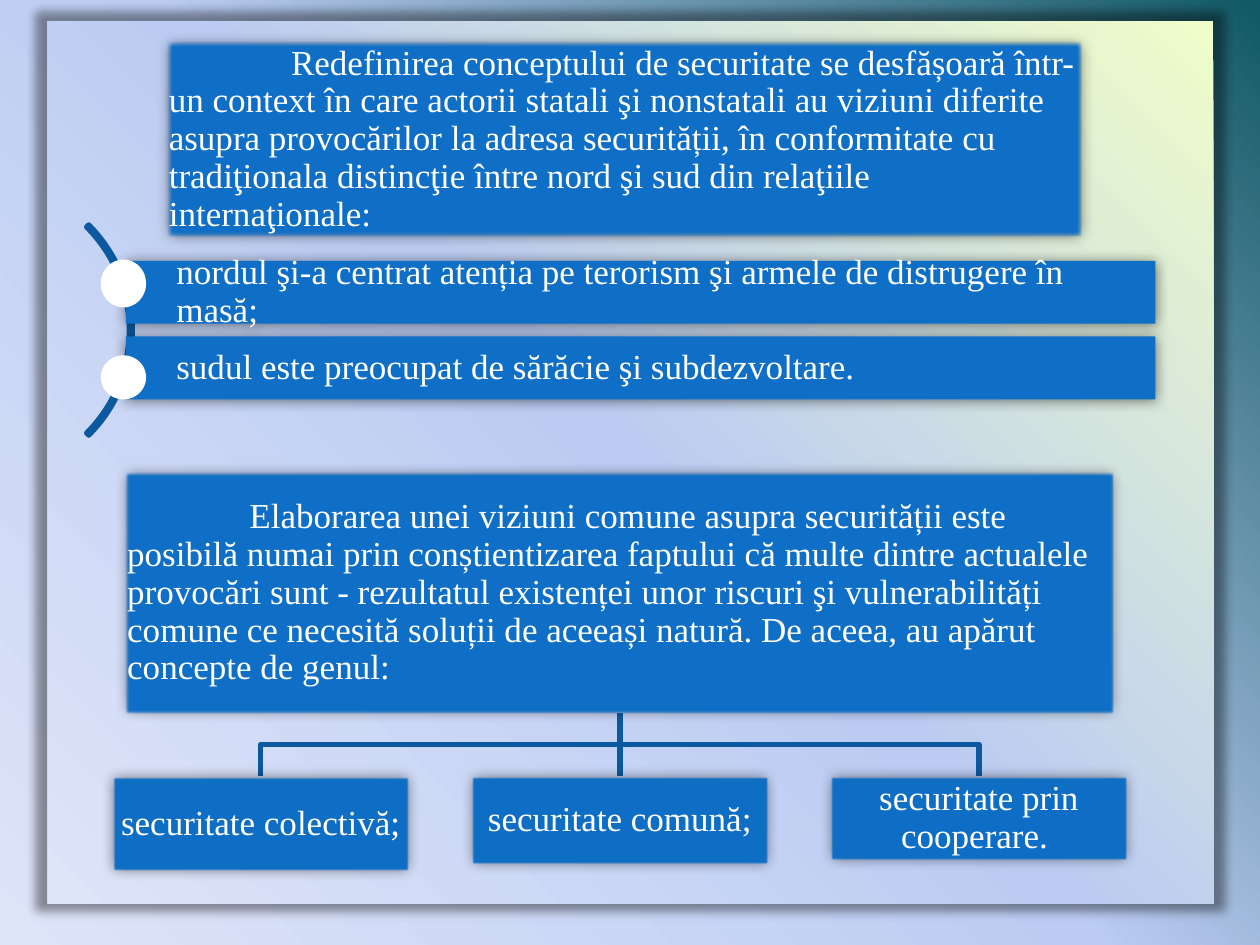
from lxml import etree
from pptx import Presentation
from pptx import util as u
from pptx.dml.color import RGBColor
from pptx.enum import shapes, text
from pptx.oxml.ns import qn

FONT = "Times New Roman"
BLUE, DARK_BLUE, WHITE = "0F6FC6", "0C599F", "FFFFFF"


def colour(value):
    return RGBColor.from_string(value)


class Painter:
    """Holds the style and the current page."""

    def __init__(self, page):
        self.page = page

    def gradient(self, owner, fill, first):
        """Three-stop gradient running from the top right corner."""
        fill.gradient()
        fill.gradient_angle = 225
        stops = owner.find(".//" + qn("a:gsLst"))
        for stop in list(stops):
            stops.remove(stop)
        for place, value in ((0, first), (50, "BBCBF2"), (100, "DEE5F8")):
            stop = etree.SubElement(stops, qn("a:gs"), pos=str(place * 1000))
            etree.SubElement(stop, qn("a:srgbClr"), val=value)

    def shadow(self, box, opacity, blur, scale=100, soft=0):
        effects = box._element.spPr.find(qn("a:effectLst"))
        outer = etree.SubElement(
            effects, qn("a:outerShdw"), blurRad=str(u.Pt(blur)), dist="0",
            dir="0", sx=str(scale * 1000), sy=str(scale * 1000),
            algn="ctr", rotWithShape="0")
        tint = etree.SubElement(outer, qn("a:srgbClr"), val="000000")
        etree.SubElement(tint, qn("a:alpha"), val=str(opacity * 1000))
        if soft:
            etree.SubElement(effects, qn("a:softEdge"), rad=str(u.Pt(soft)))

    def shape(self, kind, left, top, width, height, fill=None):
        box = self.page.shapes.add_shape(
            kind, u.Inches(left), u.Inches(top), u.Inches(width), u.Inches(height))
        box.shadow.inherit = False
        box.line.fill.background()
        if fill:
            box.fill.solid()
            box.fill.fore_color.rgb = colour(fill)
        else:
            box.fill.background()
        return box

    def outline(self, box):
        box.fill.background()
        box.line.color.rgb = colour(DARK_BLUE)
        box.line.width = u.Pt(3)

    def panel(self, left, top, width, height):
        box = self.shape(shapes.MSO_SHAPE.RECTANGLE, left, top, width, height)
        self.gradient(box._element, box.fill, "EEFDC9")
        self.shadow(box, 40, 5, 102)

    def card(self, left, top, width, height, words,
             align=text.PP_ALIGN.LEFT, inset=0.01, indent=0.01, soft=1):
        box = self.shape(shapes.MSO_SHAPE.RECTANGLE, left, top, width, height, BLUE)
        self.shadow(box, 50, 7.5, soft=soft)
        frame = box.text_frame
        frame.word_wrap = True
        frame.vertical_anchor = text.MSO_ANCHOR.MIDDLE
        frame.margin_left = u.Inches(indent)
        frame.margin_right = frame.margin_top = frame.margin_bottom = u.Inches(inset)
        para = frame.paragraphs[0]
        para.alignment = align
        para.line_spacing = 0.9
        if words.startswith("\t"):
            tabs = etree.SubElement(para._p.get_or_add_pPr(), qn("a:tabLst"))
            etree.SubElement(tabs, qn("a:tab"), pos=str(u.Inches(0.97)), algn="l")
        span = para.add_run()
        span.text = words
        span.font.name = FONT
        span.font.size = u.Pt(20)
        span.font.color.rgb = colour(WHITE)

    def arc(self, left, top, size):
        box = self.shape(shapes.MSO_SHAPE.BLOCK_ARC, left, top, size, size)
        # Angles in 1/60000 degree, divided by 100000: 315 to 45 degrees
        for index, value in enumerate((189, 27, 0.01)):
            box.adjustments[index] = value
        self.outline(box)

    def dot(self, left, top, width, height):
        self.shape(shapes.MSO_SHAPE.OVAL, left, top, width, height, WHITE)

    def branch(self, points):
        start, *rest = [(u.Inches(x), u.Inches(y)) for x, y in points]
        builder = self.page.shapes.build_freeform(*start)
        builder.add_line_segments(rest, close=False)
        box = builder.convert_to_shape()
        box.shadow.inherit = False
        self.outline(box)


def main():
    deck = Presentation()
    deck.slide_width, deck.slide_height = u.Inches(10), u.Inches(7.5)
    page = deck.slides.add_slide(deck.slide_layouts[6])
    painter = Painter(page)

    # Background and panel
    fill = page.background.fill
    painter.gradient(page._element, fill, "115964")
    painter.panel(0.38, 0.17, 9.25, 7)

    # Two views of security, along an arc
    painter.arc(-1.31, 1.44, 2.36)
    views = (
        (2.07, 2.06, 0.38, "nordul şi-a centrat atenția pe terorism şi armele "
                           "de distrugere în masă;"),
        (2.67, 2.82, 0.35, "sudul este preocupat de sărăcie şi subdezvoltare."),
    )
    for top, dot_top, dot_height, words in views:
        painter.card(1, top, 8.17, 0.5, words, inset=0.06, indent=0.4, soft=0)
        painter.dot(0.8, dot_top, 0.36, dot_height)

    # Concept tree: branches, root, leaves
    width, step, first = 2.36, 2.85, 0.89
    root_x, root_y, bend_y, leaf_y = 4.92, 5.66, 5.91, 6.16
    for offset in (step, 0, -step):
        end_x = root_x + offset
        bends = [(root_x, bend_y), (end_x, bend_y)] if offset else []
        painter.branch([(root_x, root_y), *bends, (end_x, leaf_y)])
    painter.card(
        1, 3.75, 7.84, 1.91,
        "\tElaborarea unei viziuni comune asupra securității este posibilă numai "
        "prin conștientizarea faptului că multe dintre actualele provocări sunt - "
        "rezultatul existenței unor riscuri şi vulnerabilități comune ce necesită "
        "soluții de aceeași natură. De aceea, au apărut concepte de genul:")
    leaves = (("securitate colectivă;", 0.76), ("securitate comună;", 0.7),
              ("securitate prin cooperare. ", 0.67))
    for index, (words, height) in enumerate(leaves):
        painter.card(first + index * step, leaf_y, width, height, words,
                     align=text.PP_ALIGN.CENTER)

    # Opening statement
    painter.card(
        1.33, 0.33, 7.25, 1.55,
        "\tRedefinirea conceptului de securitate se desfășoară într-un context în "
        "care actorii statali şi nonstatali au viziuni diferite asupra "
        "provocărilor la adresa securității, în conformitate cu tradiţionala "
        "distincţie între nord şi sud din relaţiile internaţionale:")

    deck.save("out.pptx")


if __name__ == "__main__":
    main()
